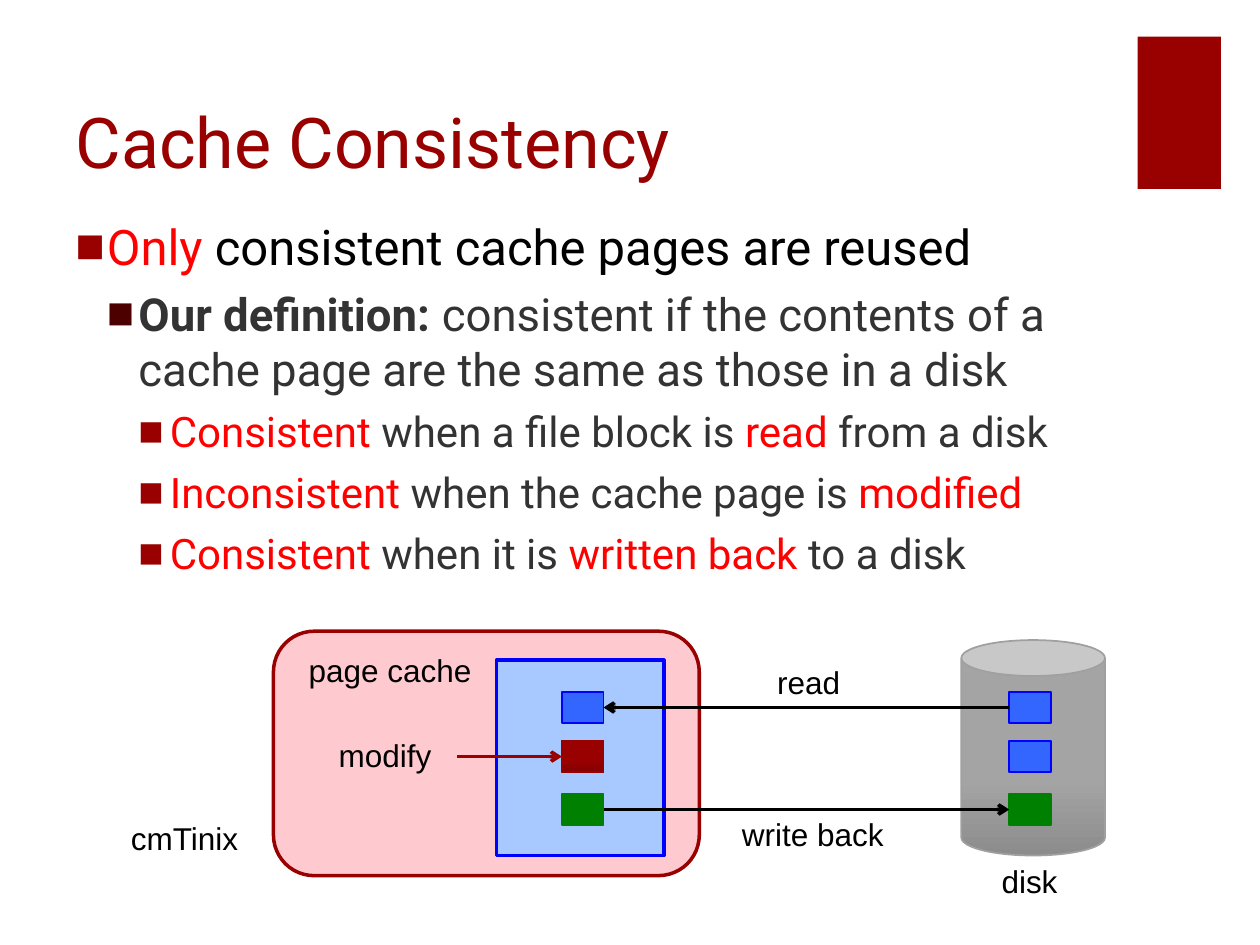
import pptx
import pptx.dml.color
import pptx.enum.shapes
import pptx.enum.text
import pptx.util
from lxml import etree
from pptx.oxml.ns import qn

RGB = pptx.dml.color.RGBColor
SHAPE = pptx.enum.shapes.MSO_SHAPE
ALIGN = pptx.enum.text.PP_ALIGN
ANCHOR = pptx.enum.text.MSO_ANCHOR
AUTO_SIZE = pptx.enum.text.MSO_AUTO_SIZE

CRIMSON = RGB(0x99, 0x00, 0x00)
DARK_CRIMSON = RGB(0x83, 0x00, 0x00)
MAROON = RGB(0x4D, 0x00, 0x00)
RED = RGB(0xFF, 0x00, 0x00)
BLACK = RGB(0x00, 0x00, 0x00)
CHARCOAL = RGB(0x33, 0x33, 0x33)
PINK = RGB(0xFF, 0xC9, 0xD0)
PALE_BLUE = RGB(0xA7, 0xC9, 0xFF)
BLOCK_BLUE = RGB(0x33, 0x66, 0xFF)
BLUE = RGB(0x00, 0x00, 0xFF)
GREEN = RGB(0x00, 0x80, 0x00)
STEEL = RGB(0xA4, 0xA4, 0xA4)
DARK_STEEL = RGB(0x8C, 0x8C, 0x8C)
STEEL_EDGE = RGB(0xA0, 0xA0, 0xA0)

SLIDE_WIDTH = pptx.util.Inches(10)
SLIDE_HEIGHT = pptx.util.Inches(7.5)
COLUMNS, ROWS = 100, 75
BLOCK_WIDTH, BLOCK_HEIGHT = 3.3, 2.5
CACHE_COLUMN, DISK_COLUMN = 44.6, 80.1
READ_ROW, MODIFY_ROW, WRITE_ROW = 54.9, 58.8, 63

LEVELS = [
    dict(size=28, before=18, bullet=CRIMSON),
    dict(size=26, before=6, bullet=MAROON),
    dict(size=24, before=6, bullet=CRIMSON),
]
OUTLINE = [
    (0, [("Only ", RED, False), ("consistent cache pages are reused", BLACK, False)]),
    (1, [("Our definition:", CHARCOAL, True),
         (" consistent if the contents of a cache page are the same as those in a disk",
          CHARCOAL, False)]),
    (2, [("Consistent", RED, False), (" when a file block is ", CHARCOAL, False),
         ("read", RED, False), (" from a disk", CHARCOAL, False)]),
    (2, [("Inconsistent", RED, False), (" when the cache page is ", CHARCOAL, False),
         ("modified", RED, False)]),
    (2, [("Consistent", RED, False), (" when it is ", CHARCOAL, False),
         ("written back", RED, False), (" to a disk", CHARCOAL, False)]),
]


def grid_x(columns):
    return round(SLIDE_WIDTH * columns / COLUMNS)


def grid_y(rows):
    return round(SLIDE_HEIGHT * rows / ROWS)


def grid_box(column, row, width, height):
    return grid_x(column), grid_y(row), grid_x(width), grid_y(height)


def write(paragraph, text, size=18, font="Arial", color=BLACK, bold=False):
    run = paragraph.add_run()
    run.text = text
    run.font.size = pptx.util.Pt(size)
    run.font.name = font
    run.font.color.rgb = color
    run.font.bold = bold


def add_bullet(paragraph, level, color):
    properties = paragraph._p.get_or_add_pPr()
    properties.set("marL", str(grid_x(2.5 * (level + 1))))
    properties.set("indent", str(-grid_x(2.5)))
    bullet_color = etree.SubElement(properties, qn("a:buClr"))
    etree.SubElement(bullet_color, qn("a:srgbClr"), val=str(color))
    etree.SubElement(properties, qn("a:buFont"), typeface="Arial")
    etree.SubElement(properties, qn("a:buChar"), char="■")


def add_title(slide, text):
    title = slide.shapes.title
    title.left, title.top, title.width, title.height = grid_box(5, 2.5, 84.2, 12.5)
    title.text_frame.vertical_anchor = ANCHOR.BOTTOM
    title.text_frame.word_wrap = True
    heading = title.text_frame.paragraphs[0]
    heading.alignment = ALIGN.LEFT
    write(heading, text, size=40, font="Roboto", color=CRIMSON)


def add_outline(slide):
    frame = slide.shapes.add_textbox(*grid_box(5, 16.7, 89.2, 52.8)).text_frame
    frame.word_wrap = True
    for index, (level, pieces) in enumerate(OUTLINE):
        point = frame.add_paragraph() if index else frame.paragraphs[0]
        style = LEVELS[level]
        point.level = level
        point.space_before = pptx.util.Pt(style["before"])
        add_bullet(point, level, style["bullet"])
        for text, color, bold in pieces:
            write(point, text, size=style["size"], font="Roboto", color=color, bold=bold)


def add_panel(slide, kind, box, fill, edge=None, weight=1, shade=None):
    panel = slide.shapes.add_shape(kind, *grid_box(*box))
    panel.shadow.inherit = False
    if shade is None:
        panel.fill.solid()
        panel.fill.fore_color.rgb = fill
    else:
        panel.fill.gradient()
        panel.fill.gradient_angle = 90
        for stop, color, position in zip(panel.fill.gradient_stops, (shade, fill), (0, 0.35)):
            stop.color.rgb = color
            stop.position = position
    if edge is None:
        panel.line.fill.background()
    else:
        panel.line.color.rgb = edge
        panel.line.width = pptx.util.Pt(weight)
    return panel


def add_block(slide, column, row, fill, edge, shade=None):
    add_panel(slide, SHAPE.RECTANGLE, (column, row, BLOCK_WIDTH, BLOCK_HEIGHT),
              fill, edge, shade=shade)


def add_label(slide, text, column, row, width):
    frame = slide.shapes.add_textbox(*grid_box(column, row, width, 4)).text_frame
    frame.word_wrap = False
    frame.auto_size = AUTO_SIZE.SHAPE_TO_FIT_TEXT
    write(frame.paragraphs[0], text)


def add_arrow(slide, start, end, block_row, color):
    row = grid_y(block_row + BLOCK_HEIGHT / 2)
    arrow = slide.shapes.add_connector(
        pptx.enum.shapes.MSO_CONNECTOR.STRAIGHT, grid_x(start), row, grid_x(end), row)
    arrow.line.color.rgb = color
    arrow.line.width = pptx.util.Pt(2)
    etree.SubElement(arrow.line._get_or_add_ln(), qn("a:tailEnd"), type="arrow")
    etree.SubElement(arrow._element.spPr, qn("a:effectLst"))


def add_diagram(slide):
    disk = add_panel(slide, SHAPE.CAN, (76.3, 50.8, 11.4, 17.1), STEEL, STEEL_EDGE,
                     shade=DARK_STEEL)
    disk.adjustments[0] = 0.25
    add_panel(slide, SHAPE.ROUNDED_RECTANGLE, (21.7, 50.1, 33.8, 19.4), PINK, CRIMSON, 2)
    add_panel(slide, SHAPE.RECTANGLE, (39.4, 52.4, 13.3, 15.5), PALE_BLUE, BLUE, 2)

    for column in (CACHE_COLUMN, DISK_COLUMN):
        add_block(slide, column, READ_ROW, BLOCK_BLUE, BLUE)
        add_block(slide, column, MODIFY_ROW, BLOCK_BLUE, BLUE)
        add_block(slide, column, WRITE_ROW, GREEN, GREEN)
    add_block(slide, CACHE_COLUMN, MODIFY_ROW, CRIMSON, CRIMSON, shade=DARK_CRIMSON)

    cache_edge = CACHE_COLUMN + BLOCK_WIDTH
    add_arrow(slide, DISK_COLUMN, cache_edge, READ_ROW, BLACK)
    add_arrow(slide, cache_edge, DISK_COLUMN, WRITE_ROW, BLACK)
    add_arrow(slide, 36.3, CACHE_COLUMN, MODIFY_ROW, CRIMSON)

    for text, column, row, width in [
        ("disk", 78.5, 67.9, 6.8),
        ("cmTinix", 9.4, 64.5, 12.3),
        ("page cache", 23.5, 51.2, 15.9),
        ("read", 60.7, 52.1, 7.5),
        ("write back", 57.9, 64.2, 14.8),
        ("modify", 25.9, 57.9, 10.4),
    ]:
        add_label(slide, text, column, row, width)


def main():
    deck = pptx.Presentation()
    deck.slide_width, deck.slide_height = SLIDE_WIDTH, SLIDE_HEIGHT
    slide = deck.slides.add_slide(deck.slide_layouts.get_by_name("Title Only"))
    add_panel(slide, SHAPE.RECTANGLE, (90.3, 2.9, 6.6, 12.1), CRIMSON)
    add_title(slide, "Cache Consistency")
    add_outline(slide)
    add_diagram(slide)
    deck.save("out.pptx")


if __name__ == "__main__":
    main()
